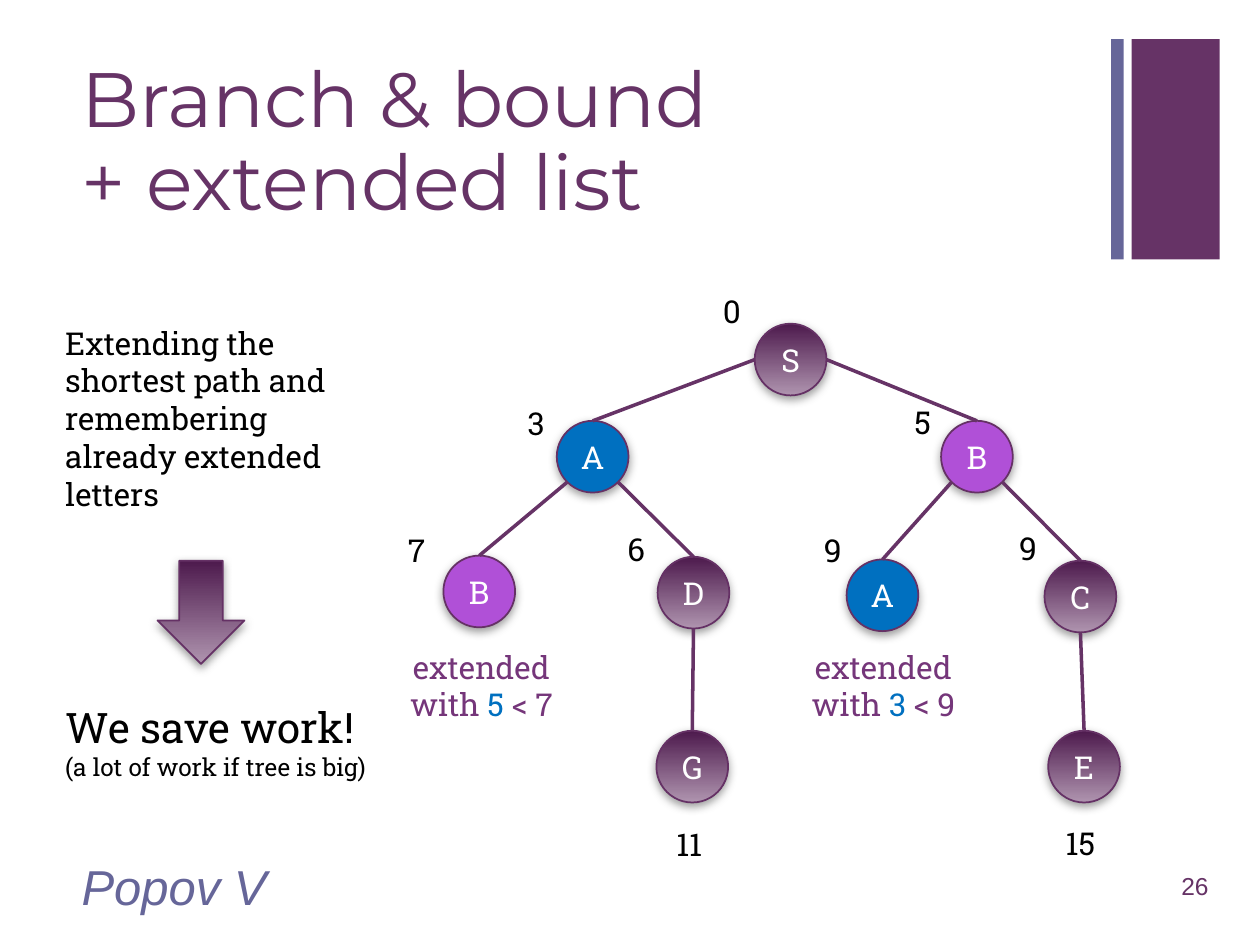
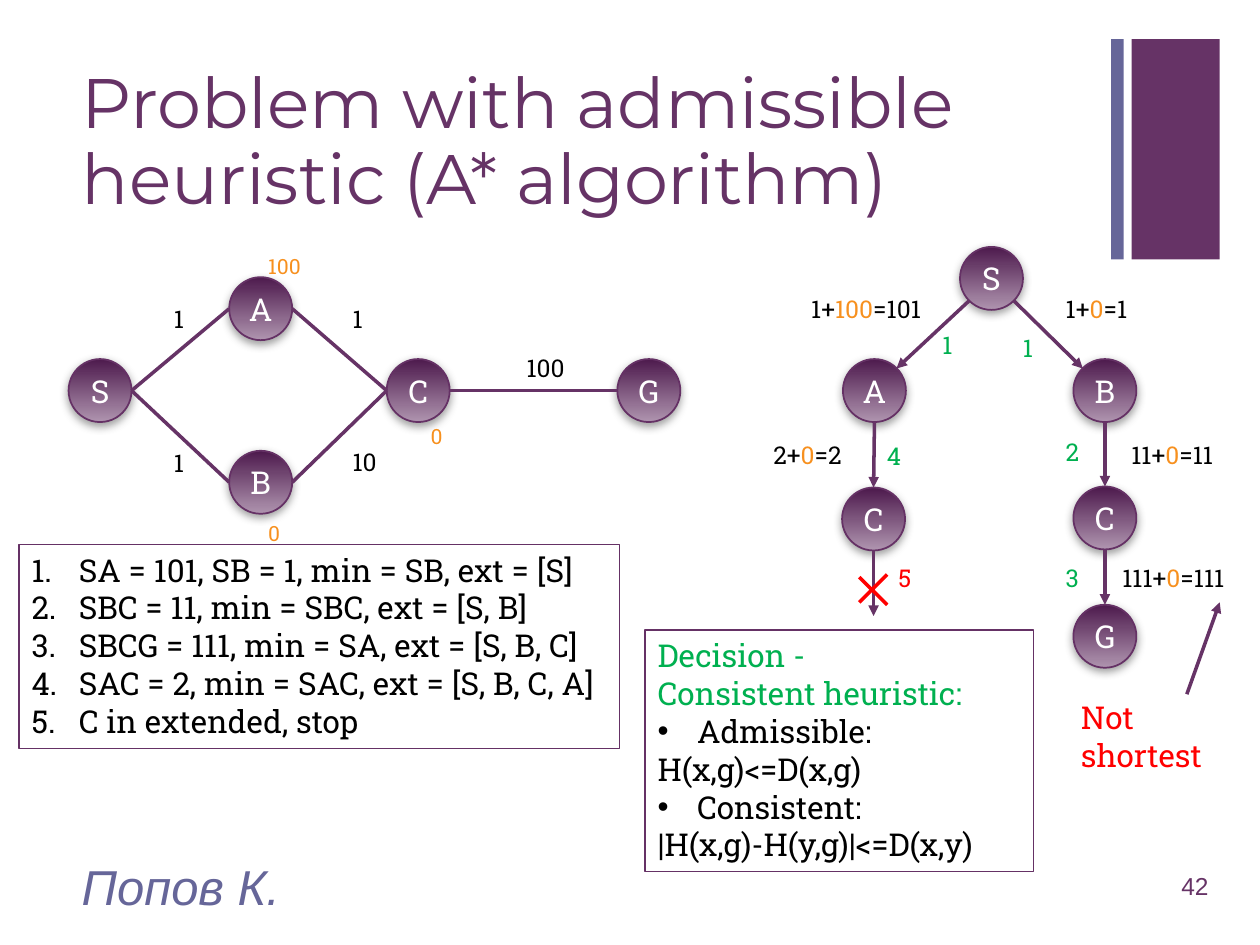
from lxml.etree import SubElement
from pptx import Presentation
from pptx.dml.color import RGBColor
from pptx.enum.shapes import MSO_CONNECTOR, MSO_SHAPE as Preset
from pptx.enum.text import MSO_ANCHOR as Anchor, MSO_AUTO_SIZE, PP_ALIGN as Align
from pptx.oxml.ns import qn
from pptx.util import Pt

COLORS = {
    "plum": "663366", "slate": "666699", "outline": "653165",
    "dark": "4D1A4D", "light": "AF94AF", "blue": "0070C0",
    "violet": "B050D7", "note": "75367A", "orange": "F7901E",
    "green": "00B050", "red": "FF0000", "black": "000000", "white": "FFFFFF",
}
TITLE_FONT, TEXT_FONT, FOOTER_FONT = "Montserrat", "Roboto Slab", "Arial"
TITLE_ONLY, TWO_CONTENT = 5, 3

# Connection sites of a circle: index and place as shares of the diameter
SITES = {
    "top": (0, 0.5, 0), "left": (2, 0, 0.5), "bottom_left": (3, 0.15, 0.85),
    "bottom": (4, 0.5, 1), "bottom_right": (5, 0.85, 0.85),
    "right": (6, 1, 0.5), "top_right": (7, 0.85, 0.15), "top_left": (1, 0.15, 0.15),
}


def rgb(name):
    return RGBColor.from_string(COLORS[name])


class SlideBuilder:
    """Holds the deck, its style and the slide being built."""

    def __init__(self):
        self.deck = Presentation()
        self.deck.slide_width, self.deck.slide_height = Pt(720), Pt(540)
        self.page = None

    def new_page(self, layout, title, title_size, author, number):
        self.page = self.deck.slides.add_slide(self.deck.slide_layouts[layout])
        heading = self.page.shapes.title
        self.place(heading, 39.6, 38.2, 594.7, 87.8)
        self.set_lines(heading, [title], title_size, "plum", TITLE_FONT, anchor=Anchor.MIDDLE)
        heading.text_frame.paragraphs[0].line_spacing = 0.9
        # Corner bands
        for left, width, color in ((646.6, 50.4, "plum"), (635, 7.2, "slate")):
            band = self.page.shapes.add_shape(
                Preset.RECTANGLE, Pt(left), Pt(22.3), Pt(width), Pt(126))
            band.shadow.inherit = False
            band.fill.solid()
            band.fill.fore_color.rgb = rgb(color)
            band.line.fill.background()
        # Footer
        self.text(653.8, 491.8, 43.9, 28.8, [number], 14, "plum", FOOTER_FONT,
                  Align.RIGHT, Anchor.MIDDLE)
        self.text(39.6, 491.8, 482.4, 28.8, [author], 28, "slate", FOOTER_FONT,
                  anchor=Anchor.MIDDLE, italic=True)

    def place(self, shape, left, top, width, height):
        shape.left, shape.top = Pt(left), Pt(top)
        shape.width, shape.height = Pt(width), Pt(height)

    def set_lines(self, shape, lines, size=18, color="black", font=TEXT_FONT,
                  align=Align.LEFT, anchor=Anchor.TOP, italic=False):
        """Each line is a string or a list of (text, color) spans."""
        frame = shape.text_frame
        frame.word_wrap = True
        frame.auto_size = MSO_AUTO_SIZE.NONE
        frame.vertical_anchor = anchor
        for index, line in enumerate(lines):
            para = frame.paragraphs[0] if index == 0 else frame.add_paragraph()
            para.alignment = align
            para.space_before = Pt(0)
            if isinstance(line, str):
                para.text = line
                colors = [color] * len(para.runs)
            else:
                for words, _ in line:
                    para.add_run().text = words
                colors = [name for _, name in line]
            for span, name in zip(para.runs, colors):
                span.font.size, span.font.name = Pt(size), font
                span.font.italic = italic
                span.font.color.rgb = rgb(name)

    def text(self, left, top, width, height, lines, *style, **more):
        box = self.page.shapes.add_textbox(Pt(left), Pt(top), Pt(width), Pt(height))
        self.set_lines(box, lines, *style, **more)

    def label(self, left, top, line, size=14, color="black"):
        length = len(line if isinstance(line, str) else "".join(t for t, _ in line))
        self.text(left, top, 15 + 0.55 * size * length, 1.2 * size + 7.2,
                  [line], size, color)

    def list_box(self, body, left, top, width, height, lines, bullets, indent):
        """Framed list; bullets has one mark a line: None, "1." or a character."""
        self.place(body, left, top, width, height)
        body.line.color.rgb = rgb("outline")
        body.line.width = Pt(0.75)
        self.set_lines(body, lines)
        for para, mark in zip(body.text_frame.paragraphs, bullets):
            props = para._p.get_or_add_pPr()
            hang = Pt(indent) if mark else 0
            props.set("marL", str(hang))
            props.set("indent", str(-hang))
            if mark is None:
                SubElement(props, qn("a:buNone"))
            elif mark == "1.":
                SubElement(props, qn("a:buAutoNum"), type="arabicPeriod")
            else:
                SubElement(props, qn("a:buFont"), typeface="Arial")
                SubElement(props, qn("a:buChar"), char=mark)

    def solid(self, preset, left, top, width, height, fill=None):
        """Outlined shape with a soft shadow; a gradient when no fill is named."""
        shape = self.page.shapes.add_shape(preset, Pt(left), Pt(top), Pt(width), Pt(height))
        if fill:
            shape.fill.solid()
            shape.fill.fore_color.rgb = rgb(fill)
        else:
            shape.fill.gradient()
            shape.fill.gradient_angle = 270
            for stop, name in zip(shape.fill.gradient_stops, ("dark", "light")):
                stop.color.rgb = rgb(name)
        shape.line.color.rgb = rgb("outline")
        shape.line.width = Pt(1)
        shape.shadow.inherit = False
        effects = shape.element.spPr.find(qn("a:effectLst"))
        shadow = SubElement(effects, qn("a:outerShdw"), blurRad=str(Pt(5)),
                            dist=str(Pt(2)), dir="5400000", rotWithShape="0")
        tint = SubElement(shadow, qn("a:srgbClr"), val="808080")
        SubElement(tint, qn("a:alpha"), val="75000")
        return shape

    def node(self, letter, left, top, size, fill=None, preset=Preset.OVAL):
        shape = self.solid(preset, left, top, size, size, fill)
        frame = shape.text_frame
        frame.margin_left = frame.margin_right = frame.margin_top = frame.margin_bottom = 0
        self.set_lines(shape, [letter], color="white", align=Align.CENTER,
                       anchor=Anchor.MIDDLE)
        return shape

    def line(self, start, end, color="plum", arrow=False):
        """Each end is an (x, y) point or a (node, site name) pair."""
        points, joints = [], []
        for tag, (first, second) in (("a:stCxn", start), ("a:endCxn", end)):
            if isinstance(second, str):
                site, across, down = SITES[second]
                points += [int(first.left + across * first.width),
                           int(first.top + down * first.height)]
                joints.append((tag, first.shape_id, site))
            else:
                points += [Pt(first), Pt(second)]
        link = self.page.shapes.add_connector(MSO_CONNECTOR.STRAIGHT, *points)
        for tag, shape_id, site in joints:
            SubElement(link.element.find(".//" + qn("p:cNvCxnSpPr")), qn(tag),
                       id=str(shape_id), idx=str(site))
        link.line.color.rgb = rgb(color)
        link.line.width = Pt(2)
        props = link.element.spPr
        if arrow:
            SubElement(props.find(qn("a:ln")), qn("a:tailEnd"), type="triangle")
        SubElement(props, qn("a:effectLst"))


def build_branch_and_bound(builder):
    builder.new_page(TITLE_ONLY, "Branch & bound \v+ extended list", 44, "Popov V", "26")

    # Search tree: name, left, top, fill, path cost and its place
    tree = [
        ("S", 431.3, 185, None, "0", 406, 163.4),
        ("A", 318.2, 240.5, "blue", "3", 294.5, 227.5),
        ("B", 537.8, 240.5, "violet", "5", 515.5, 226.8),
        ("AB", 253.4, 317.5, "violet", "7", 226, 300.2),
        ("AD", 375.8, 318.2, None, "6", 351.4, 299.5),
        ("BA", 483.8, 319.7, "blue", "9", 463.7, 300.2),
        ("BC", 596.9, 320.4, None, "9", 575.3, 298.8),
        ("ADG", 375.1, 417.6, None, "11", 379.4, 468),
        ("BCE", 599, 417.6, None, "15", 601.9, 467.3),
    ]
    nodes = {}
    for name, left, top, fill, cost, cost_left, cost_top in tree:
        nodes[name] = builder.node(name[-1], left, top, 41, fill)
        builder.label(cost_left, cost_top, cost, 18)
    for parent, site, child in (
            ("S", "left", "A"), ("S", "right", "B"),
            ("A", "bottom_left", "AB"), ("A", "bottom_right", "AD"),
            ("B", "bottom_left", "BA"), ("B", "bottom_right", "BC"),
            ("AD", "bottom", "ADG"), ("BC", "bottom", "BCE")):
        builder.line((nodes[parent], site), (nodes[child], "top"))

    # Notes under the pruned nodes
    for left, shorter, longer in ((226.1, "5", "7"), (455.8, "3", "9")):
        spans = [("with ", "note"), (shorter, "blue"), (f" < {longer}", "note")]
        builder.text(left, 366.5, 98, 51, ["extended", spans], 18, "note", align=Align.CENTER)

    # Explanation on the left
    builder.text(30.2, 181.4, 170, 116,
                 ["Extending the shortest path and remembering already extended letters"])
    builder.solid(Preset.DOWN_ARROW, 90, 320.4, 49.7, 59)
    builder.text(30.2, 397.4, 196.6, 36, ["We save work!"], 24)
    builder.text(30.2, 426.2, 196.6, 24, ["(a lot of work if tree is big)"], 14)


def build_heuristic_problem(builder):
    builder.new_page(TWO_CONTENT, "Problem with admissible heuristic (A* algorithm)", 40,
                     "Попов К.", "42")
    _, steps, decision = builder.page.placeholders

    def circles(places):
        return {name: builder.node(name[-1], left, top, 36, preset=Preset.FLOWCHART_CONNECTOR)
                for name, left, top in places}

    # Graph
    graph = circles([("S", 39.2, 205.2), ("C", 221, 205.2), ("G", 352.8, 205.2),
                     ("A", 131, 158.4), ("B", 131, 257.6)])
    for start, end in ("SA", "SB", "BC", "AC", "CG"):
        builder.line((graph[start], "right"), (graph[end], "left"))
    for left, top, weight in ((92.2, 169.9, "1"), (92.2, 252.7, "1"), (194.4, 169.9, "1"),
                              (194.4, 252, "10"), (293.8, 198, "100")):
        builder.label(left, top, weight)
    for left, top, estimate in ((146.2, 141.1, "100"), (146.2, 293.8, "0"), (239, 238.3, "0")):
        builder.label(left, top, estimate, 12, "orange")

    # Search tree
    tree = circles([("S", 548.6, 141.1), ("A", 481.7, 205.2), ("B", 613.4, 205.2),
                    ("AC", 481.2, 278.6), ("BC", 613.4, 278), ("BCG", 613.4, 345.6)])
    for parent, site, child, target in (
            ("S", "bottom_left", "A", "top_right"), ("S", "bottom_right", "B", "top_left"),
            ("A", "bottom", "AC", "top"), ("B", "bottom", "BC", "top"),
            ("BC", "bottom", "BCG", "top")):
        builder.line((tree[parent], site), (tree[child], target), arrow=True)
    for left, top, cost, estimate, total in (
            (456.5, 164.2, "1", "100", "101"), (601.9, 164.2, "1", "0", "1"),
            (639.4, 247.7, "11", "0", "11"), (634.3, 318.2, "111", "0", "111"),
            (434.9, 247.7, "2", "0", "2")):
        builder.label(left, top, [(f"{cost}+", "black"), (estimate, "orange"),
                                  (f"={total}", "black")])
    for left, top, order, color in (
            (531.4, 185, "1", "green"), (577.4, 186.5, "1", "green"),
            (601.9, 246.2, "2", "green"), (601.9, 318.2, "3", "green"),
            (499.7, 248.4, "4", "green"), (506.2, 318.2, "5", "red")):
        builder.label(left, top, order, color=color)

    # Crossed-out step
    builder.line((tree["AC"], "bottom"), (499.2, 352), arrow=True)
    builder.line((491, 329.8), (507, 345.6), "red")
    builder.line((507, 328.3), (491, 344.2), "red")

    # Remark on the result
    builder.line((678.2, 396.7), (697, 344.2), arrow=True)
    builder.text(610.6, 395.3, 90, 51, ["Not", "shortest"], 18, "red")

    # Search steps and decision
    builder.list_box(steps, 10.8, 311, 343.4, 116.6, [
        "SA = 101, SB = 1, min = SB, ext = [S]",
        "SBC = 11, min = SBC, ext = [S, B]",
        "SBCG = 111, min = SA, ext = [S, B, C]",
        "SAC = 2, min = SAC, ext = [S, B, C, A]",
        "C in extended, stop"], ["1."] * 5, 27)
    builder.list_box(decision, 368.6, 360, 221.8, 138.2, [
        [("Decision -", "green")], [("Consistent heuristic:", "green")],
        "Admissible:", "H(x,g)<=D(x,g)",
        "Consistent:", "|H(x,g)-H(y,g)|<=D(x,y)"],
        [None, None, "•", None, "•", None], 22.5)


def main():
    builder = SlideBuilder()
    build_branch_and_bound(builder)
    build_heuristic_problem(builder)
    builder.deck.save("out.pptx")


if __name__ == "__main__":
    main()
